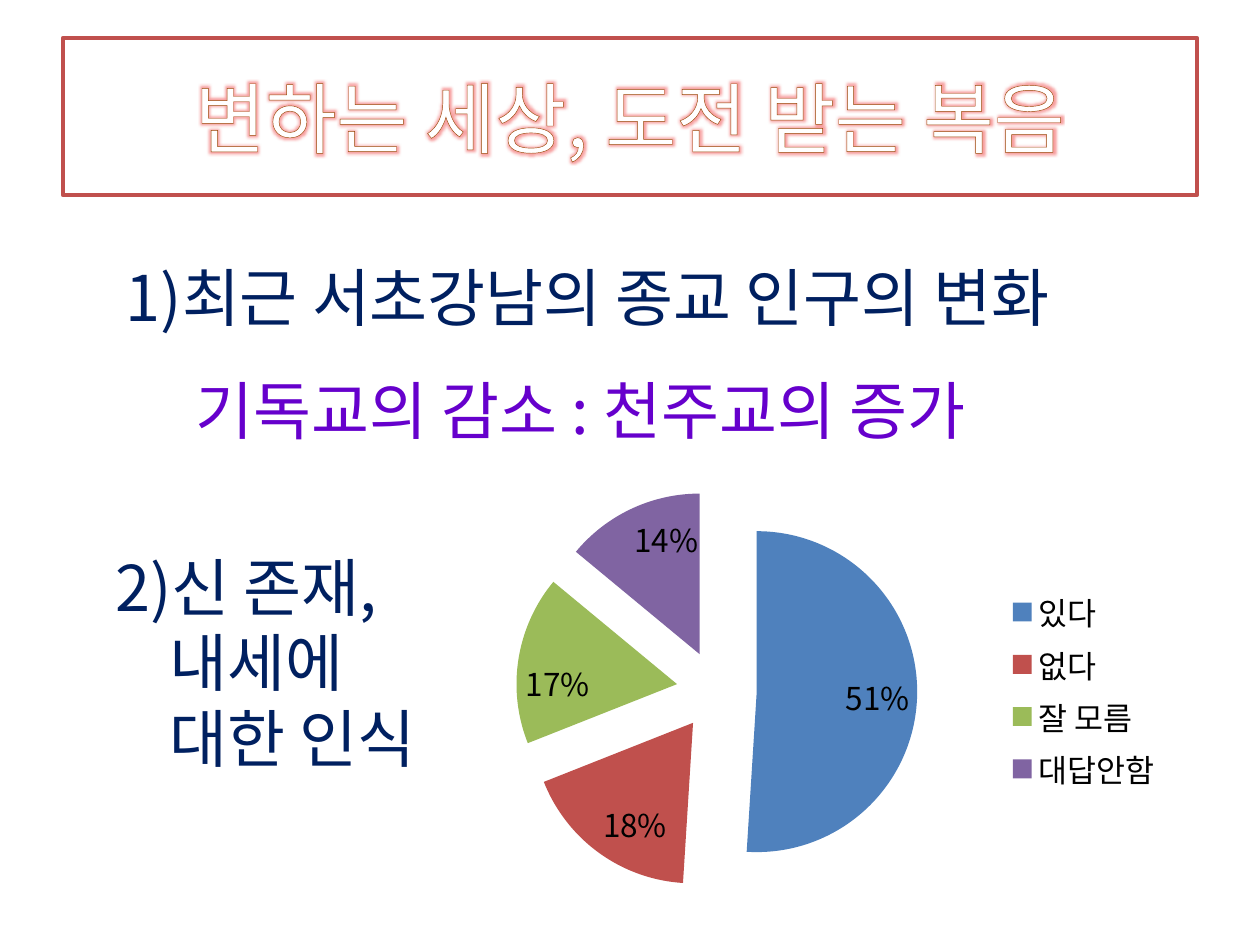
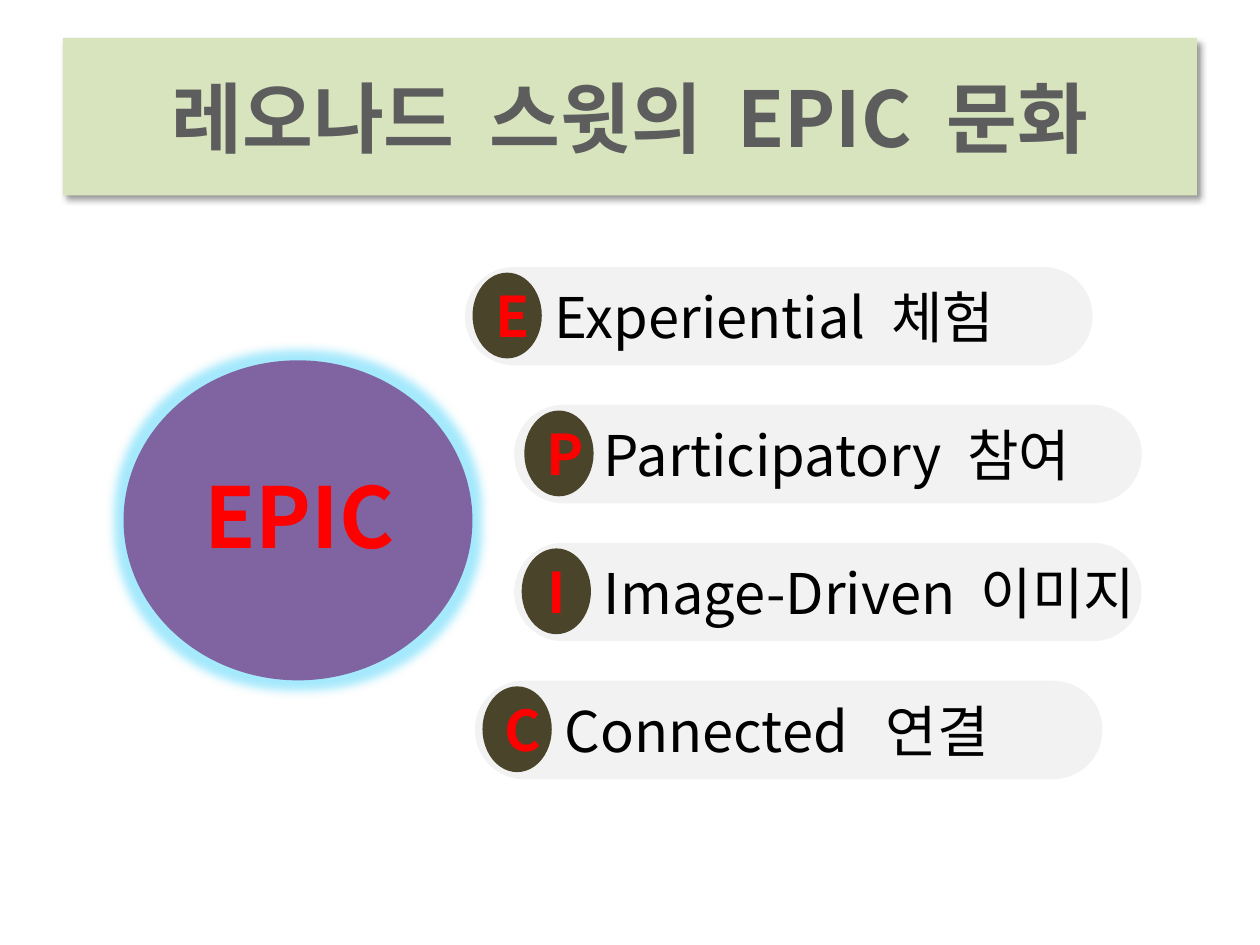
from pptx import Presentation
from pptx.chart.data import CategoryChartData
from pptx.dml.color import RGBColor
from pptx.enum.chart import XL_CHART_TYPE, XL_LABEL_POSITION, XL_LEGEND_POSITION
from pptx.enum.shapes import MSO_SHAPE
from pptx.enum.text import MSO_ANCHOR, PP_ALIGN
from pptx.oxml import parse_xml
from pptx.oxml.ns import nsdecls
from pptx.util import Pt

FONT = "Noto Sans CJK KR"
SPACE_WIDTH = 0.224  # width of a space, as a share of the font size
COLORS = {
    "white": "FFFFFF", "black": "000000", "navy": "002060", "violet": "6600CC",
    "red": "FF0000", "brick": "C0504D", "blue": "4F81BD", "green": "9BBB59",
    "purple": "8064A2", "pale green": "D7E4BD", "gray": "5D5D5D",
    "pale gray": "F2F2F2", "olive": "4A452A", "brown": "984807",
}
TITLE_BOX = (36, 21.6, 648, 90)


def rgb(name):
    return RGBColor.from_string(COLORS[name])


def emu(points):
    return int(Pt(points))


def set_attributes(target, values):
    for name, value in values.items():
        setattr(target, name, value)


def color_xml(value, alpha=100):
    return f'<a:srgbClr val="{value}"><a:alpha val="{alpha * 1000}"/></a:srgbClr>'


def glow(value, radius, alpha=40):
    return f'<a:glow rad="{emu(radius)}">{color_xml(value, alpha)}</a:glow>'


def shadow(blur, distance, degrees, alpha):
    return (f'<a:outerShdw blurRad="{emu(blur)}" dist="{emu(distance)}" '
            f'dir="{degrees * 60000}" algn="tl" rotWithShape="0">'
            f'{color_xml(COLORS["black"], alpha)}</a:outerShdw>')


def effects(content):
    return parse_xml(f'<a:effectLst {nsdecls("a")}>{content}</a:effectLst>')


def add_box(slide, kind, box, fill=None, line=None, effect=None):
    shape = slide.shapes.add_shape(kind, *map(Pt, box))
    shape.shadow.inherit = False
    if fill:
        shape.fill.solid()
        shape.fill.fore_color.rgb = rgb(fill)
    else:
        shape.fill.background()
    if line:
        shape.line.color.rgb = rgb(line)
        shape.line.width = Pt(2.25)
    else:
        shape.line.fill.background()
    if effect:
        properties = shape.fill._xPr
        properties.replace(properties.effectLst if hasattr(properties, "effectLst")
                           else properties.find("{*}effectLst"), effects(effect))
    return shape


def add_text_box(slide, box):
    frame = slide.shapes.add_textbox(*map(Pt, box)).text_frame
    frame.word_wrap = True
    return frame


def write(paragraph, text, size, color, bold=False, align=PP_ALIGN.LEFT,
          left=0, hanging=0, spacing=None):
    """Fill a paragraph; each "|" is a space two wide, "||" one three wide."""
    set_attributes(paragraph, {"alignment": align, "line_spacing": spacing})
    properties = paragraph._p.get_or_add_pPr()
    properties.set("marL", str(emu(left)))
    properties.set("indent", str(-emu(hanging)))
    words = text.split("|")
    extra = 0
    for index, word in enumerate(words):
        if index:
            extra += 1
        if not word:
            continue
        if extra:
            gap = paragraph.add_run()
            gap.text = " "
            gap._r.get_or_add_rPr().set("spc", str(round(extra * size * SPACE_WIDTH * 100)))
            extra = 0
        for number, line in enumerate(word.split("\n")):
            if number:
                paragraph.add_line_break()
            paragraph.add_run().text = line
    for run in paragraph.runs:
        set_attributes(run.font, {"name": FONT, "size": Pt(size), "bold": bold})
        run.font.color.rgb = rgb(color)
        latin = run._r.rPr.find("{*}latin")
        latin.addnext(parse_xml(f'<a:ea {nsdecls("a")} typeface="{FONT}"/>'))


def add_title(slide, text, color, outline, outline_width, bold=False,
              text_effect=None, **box_format):
    """Title band with outlined lettering."""
    frame = add_box(slide, MSO_SHAPE.RECTANGLE, TITLE_BOX, **box_format).text_frame
    set_attributes(frame, {"word_wrap": True, "vertical_anchor": MSO_ANCHOR.MIDDLE})
    paragraph = frame.paragraphs[0]
    write(paragraph, text, 44, color, bold, PP_ALIGN.CENTER)
    for run in paragraph.runs:
        properties = run._r.rPr
        properties.insert(0, parse_xml(
            f'<a:ln {nsdecls("a")} w="{emu(outline_width)}"><a:solidFill>'
            f'{color_xml(COLORS[outline])}</a:solidFill></a:ln>'))
        if text_effect:
            properties.find("{*}solidFill").addnext(effects(text_effect))


def add_belief_chart(slide, box):
    """Exploded pie with percentages and a legend."""
    answers = [("있다", 51, "blue"), ("없다", 18, "brick"),
               ("잘 모름", 17, "green"), ("대답안함", 14, "purple")]
    data = CategoryChartData()
    data.categories = [name for name, _, _ in answers]
    data.add_series("Series 1", [value for _, value, _ in answers])
    chart = slide.shapes.add_chart(XL_CHART_TYPE.PIE_EXPLODED, *map(Pt, box), data).chart
    set_attributes(chart, {"has_title": False, "has_legend": True})
    set_attributes(chart.font, {"name": FONT, "size": Pt(18)})
    chart.font.color.rgb = rgb("black")
    set_attributes(chart.legend, {"position": XL_LEGEND_POSITION.RIGHT,
                                  "include_in_layout": False})
    plot = chart.plots[0]
    set_attributes(plot, {"vary_by_categories": True, "has_data_labels": True})
    set_attributes(plot.data_labels, {
        "show_percentage": True, "show_value": False, "number_format": "0%",
        "number_format_is_linked": False, "position": XL_LABEL_POSITION.INSIDE_END})
    for index, (_, _, color) in enumerate(answers):
        fill = plot.series[0].points[index].format.fill
        fill.solid()
        fill.fore_color.rgb = rgb(color)


def add_epic_circle(slide, box):
    """Glowing ellipse with the acronym."""
    left, top, width, height = box
    add_box(slide, MSO_SHAPE.OVAL, box, "purple", effect=glow("1EC8F8", 11))
    frame = add_text_box(slide, (left + 8, top + 56.2, width - 14.4, 65.5))
    write(frame.paragraphs[0], "EPIC", 48, "red", True, PP_ALIGN.CENTER)


def add_epic_row(slide, left, top, badge_offset, letter, text):
    """Rounded bar with a letter badge at its left end."""
    bar = add_box(slide, MSO_SHAPE.ROUNDED_RECTANGLE, (left, top, 358.6, 56.2), "pale gray")
    bar.adjustments[0] = 0.5
    badge = add_box(slide, MSO_SHAPE.OVAL, (left + badge_offset, top + 3.2, 39.6, 49), "olive")
    for shape, wrap in ((bar, False), (badge, True)):
        set_attributes(shape.text_frame, {"word_wrap": wrap,
                                          "vertical_anchor": MSO_ANCHOR.MIDDLE})
    write(bar.text_frame.paragraphs[0], text, 32, "black", left=36)
    write(badge.text_frame.paragraphs[0], letter, 32, "red", True, PP_ALIGN.CENTER)


def build_religion_slide(slide):
    add_title(slide, "변하는 세상, 도전 받는 복음", "white", "brown", 1.45,
              text_effect=glow("EB1111", 5), line="brick")
    # Population change
    frame = add_text_box(slide, (64.8, 122.4, 578.2, 130.3))
    write(frame.paragraphs[0], "1)최근 서초강남의 종교 인구의 변화", 36, "navy", spacing=1.5)
    write(frame.add_paragraph(), "기독교의 감소 : 천주교의 증가", 36, "violet",
          left=40, spacing=1.5)
    # Belief in God and the afterlife
    frame = add_text_box(slide, (59, 309.6, 203.8, 181.4))
    write(frame.paragraphs[0], "2)신 존재,\n내세에\n대한 인식", 36, "navy",
          left=31, hanging=31)
    add_belief_chart(slide, (246.2, 270, 425.5, 249.1))


def build_epic_slide(slide):
    add_epic_circle(slide, (70.6, 205.9, 199.4, 182.9))
    add_title(slide, "레오나드|스윗의|EPIC|문화", "gray", "white", 1.4, bold=True,
              fill="pale green", effect=shadow(4, 3, 45, 40))
    rows = [(265.7, 4.3, "E", "Experiential|체험"),
            (293.8, 5.8, "P", "Participatory|참여"),
            (293.8, 4.3, "I", "Image-Driven|이미지"),
            (271.4, 4.3, "C", "Connected||연결")]
    for index, (left, badge_offset, letter, text) in enumerate(rows):
        add_epic_row(slide, left, 152.6 + index * 78.8, badge_offset, letter, text)


def main():
    presentation = Presentation()
    set_attributes(presentation, {"slide_width": Pt(720), "slide_height": Pt(540)})
    for build in (build_religion_slide, build_epic_slide):
        build(presentation.slides.add_slide(presentation.slide_layouts[6]))
    presentation.save("out.pptx")


if __name__ == "__main__":
    main()
